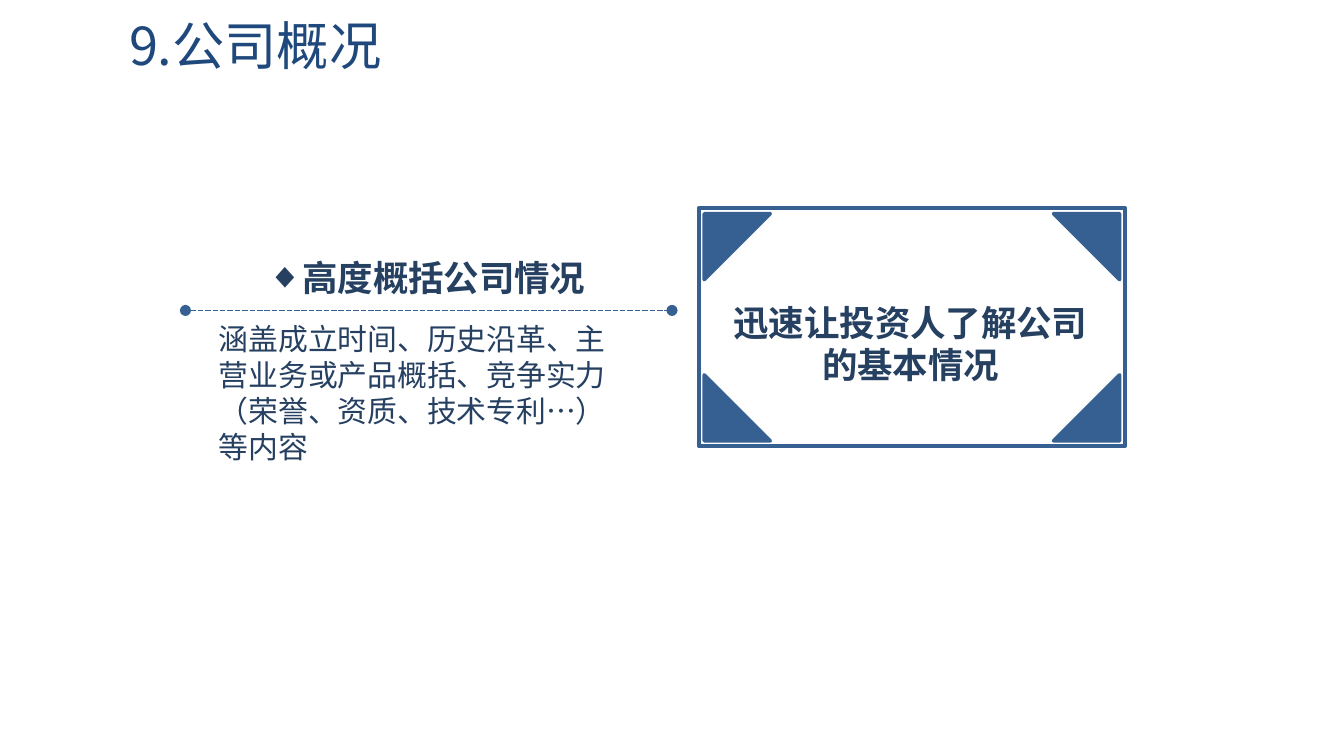
import dataclasses

import lxml.etree
import pptx
import pptx.dml.color
import pptx.enum.dml
import pptx.enum.shapes
import pptx.enum.text
import pptx.oxml.ns
import pptx.util

Inches = pptx.util.Inches
Pt = pptx.util.Pt
RGBColor = pptx.dml.color.RGBColor
Align = pptx.enum.text.PP_ALIGN
Shape = pptx.enum.shapes.MSO_SHAPE
qn = pptx.oxml.ns.qn

BLUE = RGBColor(0x37, 0x60, 0x92)
NAVY = RGBColor(0x25, 0x40, 0x61)
TITLE = RGBColor(0x1F, 0x49, 0x7D)
SANS = "Noto Sans CJK SC"
SANS_JP = "Noto Sans CJK JP"


@dataclasses.dataclass(frozen=True)
class Box:
    left: float
    top: float
    width: float
    height: float

    def place(self) -> tuple:
        return tuple(map(Inches, dataclasses.astuple(self)))


WIDTH = 10
CARD = Box(5.2, 1.55, 3.17, 1.77)
CORNER = 0.49
INSET = 0.04


def add_node(parent, tag: str, **attrs: str):
    return lxml.etree.SubElement(parent, qn(tag), attrs)


def write(shape, text: str, *, size: float, color: RGBColor,
          font: str = SANS, asian: str = SANS, bold: bool = False,
          align=Align.LEFT, margin: float = 0, indent: float = 0,
          spacing: float | None = None, bullet: str = "") -> None:
    frame = shape.text_frame
    frame.word_wrap = True
    par = frame.paragraphs[0]
    par.alignment = align
    props = par._p.get_or_add_pPr()
    props.set("marL", str(Inches(margin)))
    props.set("indent", str(Inches(indent)))
    if spacing:
        par.line_spacing = spacing
    if bullet:
        add_node(props, "a:buFont", typeface=font)
        add_node(props, "a:buChar", char=bullet)
    run = par.add_run()
    run.text = text
    run.font.size = Pt(size)
    run.font.bold = bold
    run.font.color.rgb = color
    run.font.name = font
    add_node(run._r.get_or_add_rPr(), "a:ea", typeface=asian)


def add_text(slide, box: Box, text: str, **style) -> None:
    write(slide.shapes.add_textbox(*box.place()), text, **style)


def add_shape(slide, kind, box: Box, line: float):
    shape = slide.shapes.add_shape(kind, *box.place())
    shape.shadow.inherit = False
    shape.fill.background()
    shape.line.color.rgb = BLUE
    shape.line.width = Pt(line)
    return shape


def add_corner(slide, right: bool, upper: bool) -> None:
    """Draw a triangle with its right angle in one corner of the card."""
    left = CARD.left + (CARD.width - INSET - CORNER if right else INSET)
    top = CARD.top + (INSET if upper else CARD.height - INSET - CORNER)
    box = Box(left, top, CORNER, CORNER)
    shape = add_shape(slide, Shape.RIGHT_TRIANGLE, box, 2)
    shape.fill.solid()
    shape.fill.fore_color.rgb = BLUE
    frame = shape._element.spPr.xfrm
    frame.set("flipH", str(int(right)))
    frame.set("flipV", str(int(upper)))


def add_rule(slide, left: float, right: float, y: float) -> None:
    """Draw a dashed level line with a dot at each end."""
    rule = slide.shapes.add_connector(
        pptx.enum.shapes.MSO_CONNECTOR.STRAIGHT,
        Inches(left), Inches(y), Inches(right), Inches(y))
    rule.line.color.rgb = BLUE
    rule.line.width = Pt(1)
    rule.line.dash_style = pptx.enum.dml.MSO_LINE.SQUARE_DOT
    props = rule._element.spPr
    line = props.find(qn("a:ln"))
    add_node(line, "a:headEnd", type="oval")
    add_node(line, "a:tailEnd", type="oval")
    add_node(props, "a:effectLst")


def main() -> None:
    deck = pptx.Presentation()
    deck.slide_width = Inches(WIDTH)
    deck.slide_height = Inches(WIDTH * 9 / 16)
    slide = deck.slides.add_slide(deck.slide_layouts[5])

    title = slide.shapes.title
    title.left, title.top, title.width, title.height = Box(
        0.86, 0.02, 3.69, 0.63).place()
    title.text_frame.vertical_anchor = pptx.enum.text.MSO_ANCHOR.MIDDLE
    title.text_frame.auto_size = pptx.enum.text.MSO_AUTO_SIZE.NONE
    write(title, "9.公司概况", size=28, color=TITLE, font=SANS_JP,
          asian=SANS_JP, margin=1, indent=-1)

    add_shape(slide, Shape.FLOWCHART_PROCESS, CARD, 2.25)
    for right in (False, True):
        for upper in (False, True):
            add_corner(slide, right, upper)
    add_text(slide, Box(5.24, 2.19, 3.07, 0.74),
             "迅速让投资人了解公司的基本情况", size=19, color=NAVY,
             bold=True, align=Align.CENTER)

    add_text(slide, Box(1.4, 1.76, 3.43, 0.48), "高度概括公司情况",
             size=19, color=NAVY, font="Arial", bold=True,
             align=Align.JUSTIFY, margin=0.69, indent=-0.2,
             spacing=1.3, bullet="◆")
    add_text(slide, Box(1.53, 2.34, 3.1, 1.18),
             "涵盖成立时间、历史沿革、主营业务或产品概括、竞争实力"
             "（荣誉、资质、技术专利…）等内容", size=16, color=NAVY)
    add_rule(slide, 1.38, 5, 2.31)

    deck.save("out.pptx")


if __name__ == "__main__":
    main()
